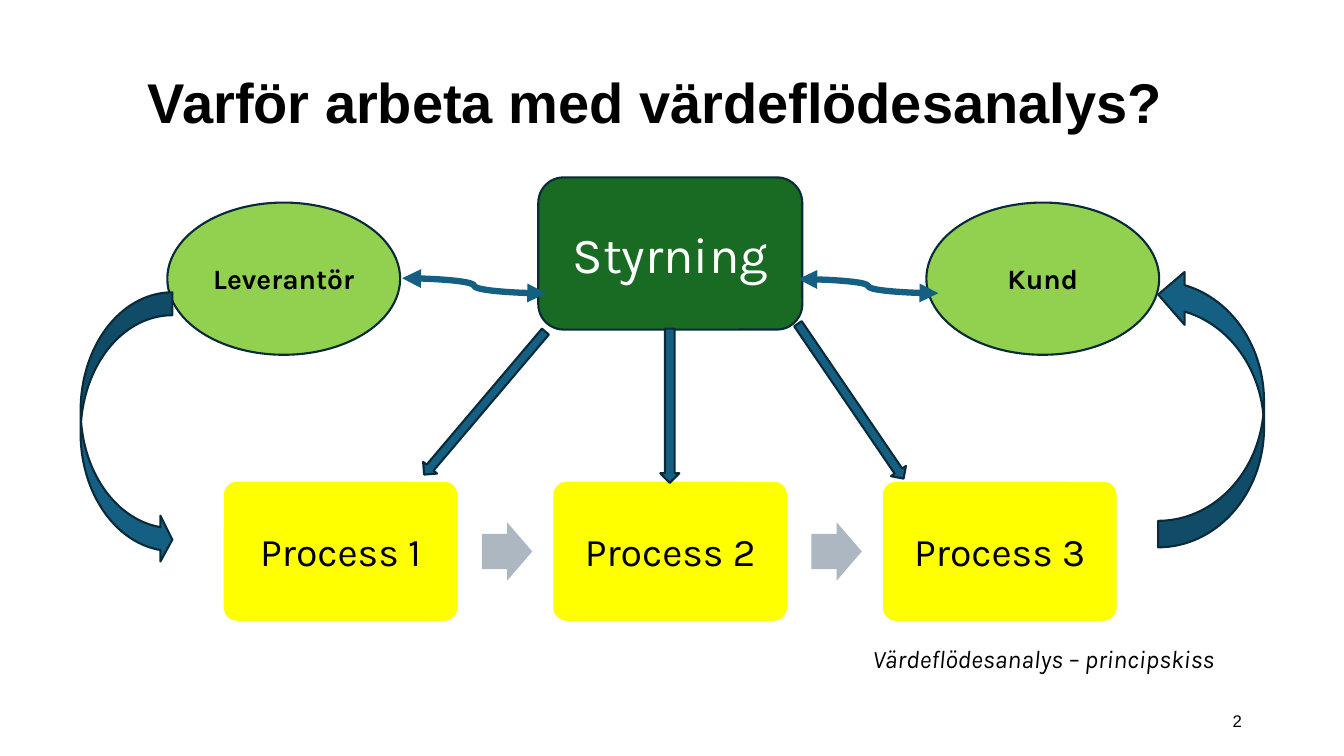
"""Build the value stream analysis slide with its principle sketch."""
from pptx import Presentation
from pptx.dml.color import RGBColor
from pptx.enum.shapes import MSO_CONNECTOR, MSO_SHAPE
from pptx.enum.text import MSO_ANCHOR, PP_ALIGN
from pptx.oxml.ns import qn
from pptx.util import Pt
from lxml import etree

ROUND_RECT = MSO_SHAPE.ROUNDED_RECTANGLE
ELLIPSE = MSO_SHAPE.OVAL
RIGHT_ARROW = MSO_SHAPE.RIGHT_ARROW
DOWN_ARROW = MSO_SHAPE.DOWN_ARROW
CURVED_RIGHT = MSO_SHAPE.CURVED_RIGHT_ARROW
CURVED_UP = MSO_SHAPE.CURVED_UP_ARROW
CURVE = MSO_CONNECTOR.CURVE
TOP, MIDDLE = MSO_ANCHOR.TOP, MSO_ANCHOR.MIDDLE
LEFT, CENTER, RIGHT = PP_ALIGN.LEFT, PP_ALIGN.CENTER, PP_ALIGN.RIGHT


def color(value):
    return RGBColor.from_string(value)


class Sketch:
    HEADING, BODY = "Arial", "Karla"
    BLACK, WHITE = "000000", "FFFFFF"
    BLUE, NAVY, GRAY = "156082", "092A39", "ACB7C1"
    YELLOW, LIME, GREEN = "FFFF00", "92D050", "196B24"

    def __init__(self, prs):
        self.slide = prs.slides.add_slide(prs.slide_layouts[6])

    def label(self, tf, text, size, font=BODY, ink=BLACK, bold=False,
              italic=False, align=CENTER, anchor=MIDDLE, wrap=True):
        tf.word_wrap = wrap
        tf.vertical_anchor = anchor
        p = tf.paragraphs[0]
        p.alignment = align
        r = p.add_run()
        r.text = text
        r.font.name = font
        r.font.size = Pt(size)
        r.font.bold = bold
        r.font.italic = italic
        r.font.color.rgb = color(ink)

    def text(self, box, text, size, **style):
        sp = self.slide.shapes.add_textbox(*map(Pt, box))
        self.label(sp.text_frame, text, size, **style)

    def shape(self, kind, box, fill=BLUE, line=NAVY, adj=(), rotation=0):
        sp = self.slide.shapes.add_shape(kind, *map(Pt, box))
        sp.shadow.inherit = False
        sp.rotation = rotation
        for i, value in enumerate(adj):
            sp.adjustments[i] = value
        sp.fill.solid()
        sp.fill.fore_color.rgb = color(fill)
        if line:
            sp.line.color.rgb = color(line)
            sp.line.width = Pt(1.5)
        else:
            sp.line.fill.background()
        return sp

    def node(self, kind, box, text, size, fill, line=NAVY, adj=(), **style):
        sp = self.shape(kind, box, fill, line, adj)
        self.label(sp.text_frame, text, size, **style)

    def link(self, x1, y1, x2, y2):
        cx = self.slide.shapes.add_connector(CURVE, *map(Pt, (x1, y1, x2, y2)))
        cx.line.color.rgb = color(self.BLUE)
        cx.line.width = Pt(4.5)
        props = cx.element.spPr
        ln = props.find(qn("a:ln"))
        for end in ("a:headEnd", "a:tailEnd"):
            etree.SubElement(ln, qn(end), type="triangle")
        etree.SubElement(props, qn("a:effectLst"))


def main():
    prs = Presentation()
    prs.slide_width, prs.slide_height = Pt(960), Pt(540)
    s = Sketch(prs)

    s.text((678.2, 500.4, 216, 28.8), "2", 12, font=s.HEADING, align=RIGHT)
    s.text((98.6, 44.6, 746.6, 55.4), "Varför arbeta med värdeflödesanalys?", 40,
           font=s.HEADING, bold=True, align=LEFT, anchor=TOP, wrap=False)
    s.text((616.3, 455.8, 293, 28.8), "Värdeflödesanalys – principskiss", 18,
           italic=True, align=LEFT, anchor=TOP)

    pitch = 235.4
    for i in range(3):
        s.node(ROUND_RECT, (159.1 + i * pitch, 343.4, 168.5, 100.8),
               f"Process {i + 1}", 28, s.YELLOW, s.WHITE, adj=(0.1,))
    for i in range(2):
        s.shape(RIGHT_ARROW, (344.2 + i * pitch, 373, 36, 41.8), s.GRAY, None,
                adj=(0.6, 0.5))

    s.node(ROUND_RECT, (384.5, 126.7, 188.6, 108.7), "Styrning", 36, s.GREEN,
           ink=s.WHITE)
    for x, party in ((119.5, "Leverantör"), (661.7, "Kund")):
        s.node(ELLIPSE, (x, 144.7, 166.3, 108.7), party, 20, s.LIME, bold=True)

    s.shape(DOWN_ARROW, (339.8, 221, 13, 133.9), rotation=40.3)
    s.shape(DOWN_ARROW, (471.6, 234.7, 13.7, 110.2))
    s.shape(CURVED_RIGHT, (57.6, 208.8, 65.5, 193), adj=(0.25, 0.5, 0.13))
    s.link(287.3, 198.7, 390.2, 209.5)
    s.link(570.2, 199.4, 670.3, 209.5)
    s.shape(CURVED_UP, (765.4, 253.4, 199.4, 75.6), rotation=270)
    s.shape(DOWN_ARROW, (601.2, 219.6, 13, 133.9), rotation=325.7)

    prs.save("out.pptx")


if __name__ == "__main__":
    main()
